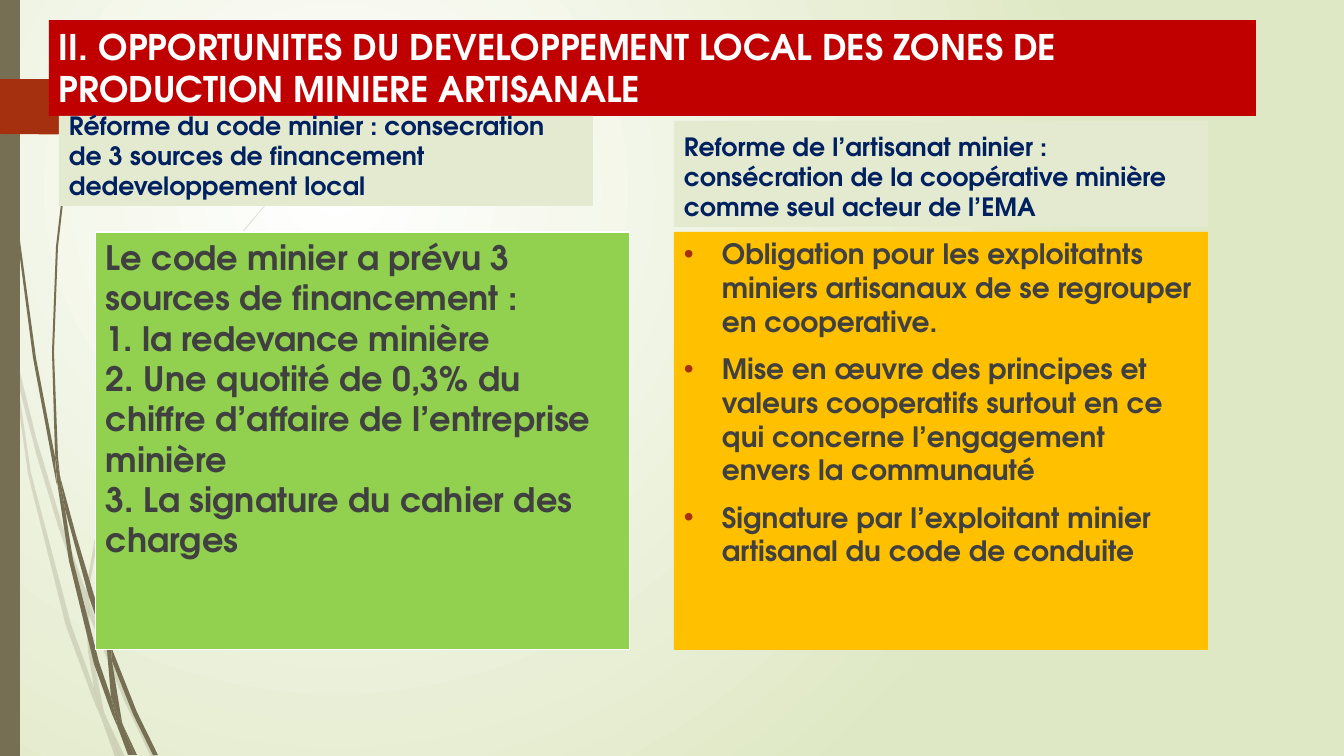
from pptx import Presentation
from pptx.dml.color import RGBColor
from pptx.enum.shapes import MSO_SHAPE
from pptx.enum.text import MSO_ANCHOR, PP_ALIGN
from pptx.oxml.ns import qn
from pptx.util import Emu, Pt
from lxml.etree import SubElement

FONT = "TeX Gyre Adventor"
WHITE = RGBColor(0xFF, 0xFF, 0xFF)
PALE_GREEN = RGBColor(0xDF, 0xE8, 0xC4)
OLIVE = RGBColor(0x76, 0x6F, 0x54)
RUST = RGBColor(0xA5, 0x30, 0x10)
RED = RGBColor(0xC0, 0x00, 0x00)
HEADING_FILL = RGBColor(0xE3, 0xEA, 0xCF)
NAVY = RGBColor(0x00, 0x20, 0x60)
GREEN = RGBColor(0x92, 0xD0, 0x50)
AMBER = RGBColor(0xFF, 0xC0, 0x00)
DARK_GREY = RGBColor(0x40, 0x40, 0x40)

EMU_PER_PX = 914400 / 100.8
SLIDE_SIZE = (1344, 756)
BULLET_INDENT = 38

TITLE = ["II. OPPORTUNITES DU DEVELOPPEMENT LOCAL DES ZONES DE PRODUCTION MINIERE ARTISANALE"]
FUNDING_HEADING = ["Réforme du code minier : consecration de 3 sources de financement dedeveloppement local"]
FUNDING = [
    "Le code minier a prévu 3 sources de financement :",
    "1. la redevance minière",
    "2. Une quotité de 0,3% du chiffre d’affaire de l’entreprise minière",
    "3. La signature du cahier des charges",
]
COOPERATIVE_HEADING = [
    "Reforme de l’artisanat minier : consécration de la coopérative minière comme seul acteur de l’EMA"
]
COOPERATIVE = [
    "Obligation pour les exploitatnts miniers artisanaux de se regrouper en cooperative.",
    "Mise en œuvre des principes et valeurs cooperatifs surtout en ce qui concerne "
    "l’engagement envers la communauté",
    "Signature par l’exploitant minier artisanal du code de conduite",
]

# box (left, top, width, height), fill, text, format
HEADING_FORMAT = {"size": 18, "color": NAVY, "before": 10, "anchor": MSO_ANCHOR.BOTTOM}
PANELS = [
    ((49, 20, 1207, 96), RED, TITLE, {"size": 25.2, "color": WHITE}),
    ((59, 116, 534, 90), HEADING_FILL, FUNDING_HEADING, HEADING_FORMAT),
    ((96, 232, 534, 418), GREEN, FUNDING, {"size": 24, "color": DARK_GREY, "line": WHITE}),
    ((674, 121, 534, 106), HEADING_FILL, COOPERATIVE_HEADING, HEADING_FORMAT),
    ((674, 232, 534, 418), AMBER, COOPERATIVE,
     {"size": 20, "color": DARK_GREY, "before": 10, "bullet": RUST}),
]

PALE_GRASS = [
    [(11, 353), (9, 325), (0, 284), (0, 301), (10, 347)],
    [(58, 526), (85, 604), (86, 591), (62, 524), (36, 437), (14, 348), (17, 379), (36, 453)],
    [(93, 612), (89, 601), (89, 615), (124, 700), (151, 757), (156, 757), (128, 698)],
    [(120, 757), (125, 757), (106, 717)],
    [(94, 688), (71, 624), (31, 473), (17, 379), (11, 353), (28, 474), (66, 626), (93, 699),
     (102, 720), (100, 713)],
    [(85, 604), (88, 651), (94, 688), (97, 698), (106, 717), (104, 712), (92, 651), (89, 615),
     (89, 613)],
    [(89, 589), (111, 466), (161, 352), (231, 247), (270, 200), (292, 176), (315, 155),
     (315, 154), (291, 176), (270, 199), (230, 246), (159, 351), (108, 465), (86, 589),
     (86, 591), (89, 601)],
    [(102, 720), (115, 757), (120, 757)],
    [(89, 613), (89, 615), (89, 601), (86, 591), (85, 604)],
    [(97, 698), (94, 688), (100, 713), (102, 720), (120, 757), (106, 717)],
]
DARK_GRASS = [
    [(7, 111), (17, 235), (33, 358), (56, 481), (57, 485), (55, 461), (55, 457), (36, 358),
     (19, 234), (8, 110), (5, 48), (4, 0), (3, 0), (4, 48)],
    [(89, 597), (107, 650), (107, 638), (107, 636), (94, 595), (76, 535), (60, 476), (65, 509)],
    [(114, 654), (111, 646), (112, 661), (133, 714), (153, 755), (158, 755), (137, 712)],
    [(111, 697), (99, 662), (73, 560), (65, 509), (57, 481), (69, 561), (94, 664), (112, 714),
     (118, 728), (117, 723)],
    [(60, 476), (58, 457), (54, 352), (58, 247), (64, 195), (71, 142), (70, 142), (62, 195),
     (56, 247), (52, 352), (55, 453)],
    [(134, 755), (137, 755), (123, 725)],
    [(57, 481), (65, 509), (60, 476), (55, 453), (55, 457)],
    [(118, 728), (128, 755), (132, 755)],
    [(107, 650), (111, 697), (117, 712), (123, 725), (122, 722), (112, 661), (110, 656)],
    [(107, 650), (110, 656), (112, 661), (111, 646), (107, 636), (107, 638)],
    [(117, 712), (111, 697), (117, 723), (118, 728), (131, 755), (134, 755), (123, 725)],
]
TAG = [(0, 79), (147, 79), (149, 80), (175, 106), (175, 108), (149, 134), (147, 135), (0, 134)]


def px(length):
    return Emu(round(length * EMU_PER_PX))


def paint(shape, color, line=None):
    shape.shadow.inherit = False
    shape.fill.solid()
    shape.fill.fore_color.rgb = color
    if line is None:
        shape.line.fill.background()
    else:
        shape.line.color.rgb = line
        shape.line.width = Pt(0.75)


def add_outline(shapes, points, color, opacity=100):
    builder = shapes.build_freeform(*points[0], scale=EMU_PER_PX)
    builder.add_line_segments(points[1:], close=True)
    shape = builder.convert_to_shape()
    paint(shape, color)
    if opacity < 100:
        fill_color = shape.element.spPr.find(qn("a:solidFill"))[0]
        SubElement(fill_color, qn("a:alpha"), val=str(opacity * 1000))


def add_bullet(paragraph, color):
    properties = paragraph._p.get_or_add_pPr()
    properties.set("marL", str(px(BULLET_INDENT)))
    properties.set("indent", str(-px(BULLET_INDENT)))
    bullet_color = SubElement(properties, qn("a:buClr"))
    SubElement(bullet_color, qn("a:srgbClr"), val=str(color))
    SubElement(properties, qn("a:buFont"), typeface="Arial")
    SubElement(properties, qn("a:buChar"), char="•")


def add_panel(slide, box, fill, lines, style):
    shape = slide.shapes.add_shape(MSO_SHAPE.RECTANGLE, *map(px, box))
    paint(shape, fill, style.get("line"))
    frame = shape.text_frame
    frame.word_wrap = True
    frame.vertical_anchor = style.get("anchor", MSO_ANCHOR.TOP)
    for index, line in enumerate(lines):
        paragraph = frame.add_paragraph() if index else frame.paragraphs[0]
        paragraph.alignment = PP_ALIGN.LEFT
        paragraph.space_before = Pt(style.get("before", 0))
        if "bullet" in style:
            add_bullet(paragraph, style["bullet"])
        run = paragraph.add_run()
        run.text = line
        font_values = {"name": FONT, "size": Pt(style["size"]), "bold": True}
        for name, value in font_values.items():
            setattr(run.font, name, value)
        run.font.color.rgb = style["color"]


def set_background(slide):
    """Radial gradient, white at its focus in the upper left."""
    fill = slide.background.fill
    fill.gradient()
    for stop, color, position in zip(fill.gradient_stops, (WHITE, PALE_GREEN), (0, 1)):
        stop.color.rgb = color
        stop.position = position
    gradient = slide.element.find(".//" + qn("a:gradFill"))
    gradient.remove(gradient.find(qn("a:lin")))
    radial = SubElement(gradient, qn("a:path"), **{"path": "circle"})
    SubElement(radial, qn("a:fillToRect"), l="50000", t="50000", r="100000", b="100000")


def main():
    presentation = Presentation()
    presentation.slide_width, presentation.slide_height = map(px, SLIDE_SIZE)
    slide = presentation.slides.add_slide(presentation.slide_layouts[6])
    set_background(slide)
    for grass, opacity in ((PALE_GRASS, 20), (DARK_GRASS, 100)):
        group = slide.shapes.add_group_shape()
        for blade in grass:
            add_outline(group.shapes, blade, OLIVE, opacity)
    side_bar = slide.shapes.add_shape(MSO_SHAPE.RECTANGLE, 0, 0, px(20), px(SLIDE_SIZE[1]))
    paint(side_bar, OLIVE)
    add_outline(slide.shapes, TAG, RUST)
    for panel in PANELS:
        add_panel(slide, *panel)
    presentation.save("out.pptx")


if __name__ == "__main__":
    main()
